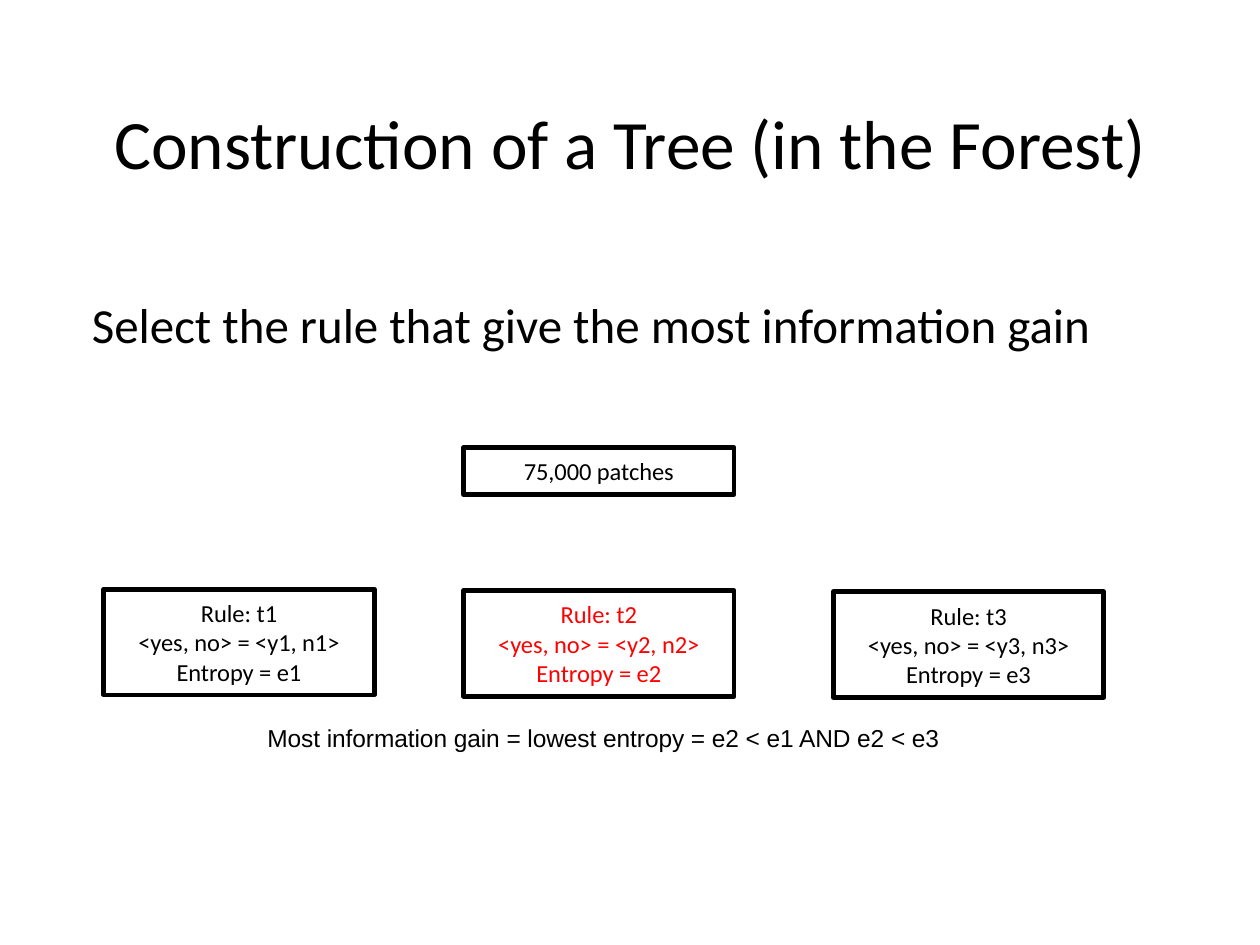
from dataclasses import dataclass

from pptx import Presentation
from pptx.dml.color import RGBColor
from pptx.enum.shapes import MSO_SHAPE
from pptx.enum.text import MSO_ANCHOR, PP_ALIGN
from pptx.slide import Slide
from pptx.text.text import TextFrame
from pptx.util import Cm, Pt

BLACK = RGBColor(0x00, 0x00, 0x00)
WHITE = RGBColor(0xFF, 0xFF, 0xFF)
RED = RGBColor(0xFF, 0x00, 0x00)

BOX_WIDTH = 4.09
RULE_HEIGHT = 1.6


@dataclass
class Label:
    """A piece of text and its place in centimetres."""
    text: str
    left: float
    top: float
    width: float
    height: float
    size: float = 10.5
    font: str = "Calibri"
    color: RGBColor = BLACK
    align: PP_ALIGN = PP_ALIGN.CENTER
    inset_x: float = 0.25
    inset_y: float = 0.13

    def bounds(self) -> tuple[Cm, Cm, Cm, Cm]:
        return Cm(self.left), Cm(self.top), Cm(self.width), Cm(self.height)


def write(frame: TextFrame, label: Label, anchor: MSO_ANCHOR) -> None:
    frame_format = {
        "word_wrap": True,
        "vertical_anchor": anchor,
        "margin_left": Cm(label.inset_x),
        "margin_right": Cm(label.inset_x),
        "margin_top": Cm(label.inset_y),
        "margin_bottom": Cm(label.inset_y),
    }
    for name, value in frame_format.items():
        setattr(frame, name, value)

    frame.text = label.text
    font_format = {"name": label.font, "size": Pt(label.size)}
    for paragraph in frame.paragraphs:
        paragraph.alignment = label.align
        for run in paragraph.runs:
            for name, value in font_format.items():
                setattr(run.font, name, value)
            run.font.color.rgb = label.color


def draw_text(slide: Slide, label: Label) -> None:
    text_box = slide.shapes.add_textbox(*label.bounds())
    write(text_box.text_frame, label, MSO_ANCHOR.TOP)


def draw_box(slide: Slide, label: Label) -> None:
    box = slide.shapes.add_shape(MSO_SHAPE.RECTANGLE, *label.bounds())
    box.shadow.inherit = False
    box.fill.solid()
    box.fill.fore_color.rgb = WHITE
    box.line.color.rgb = BLACK
    box.line.width = Pt(2)
    write(box.text_frame, label, MSO_ANCHOR.MIDDLE)


def main() -> None:
    presentation = Presentation()
    presentation.slide_width = Cm(19.05)
    presentation.slide_height = Cm(14.29)
    slide = presentation.slides.add_slide(presentation.slide_layouts[6])

    # Title and statement
    draw_text(slide, Label("Construction of a Tree (in the Forest)",
                           0.66, 1.26, 17.75, 1.6, size=29.7, inset_y=0.25))
    draw_text(slide, Label("Select the rule that give the most information gain",
                           1.14, 4.2, 17.27, 1.4, size=21,
                           align=PP_ALIGN.LEFT, inset_y=0.25))

    # Root of the tree
    draw_box(slide, Label("75,000 patches", 7.01, 6.77, BOX_WIDTH, 0.71))

    # Candidate rules, the chosen one in red
    candidates = [(1.57, BLACK), (7.01, RED), (12.6, BLACK)]
    for number, (left, color) in enumerate(candidates, start=1):
        text = (f"Rule: t{number}\n"
                f"<yes, no> = <y{number}, n{number}>\vEntropy = e{number}")
        draw_box(slide, Label(text, left, 8.89 + 0.02 * number,
                              BOX_WIDTH, RULE_HEIGHT, color=color))

    # Conclusion
    draw_text(slide, Label("Most information gain = lowest entropy = e2 < e1 AND e2 < e3",
                           1.57, 10.8, 15.12, 0.71, font="Arial"))

    presentation.save("out.pptx")


if __name__ == "__main__":
    main()
